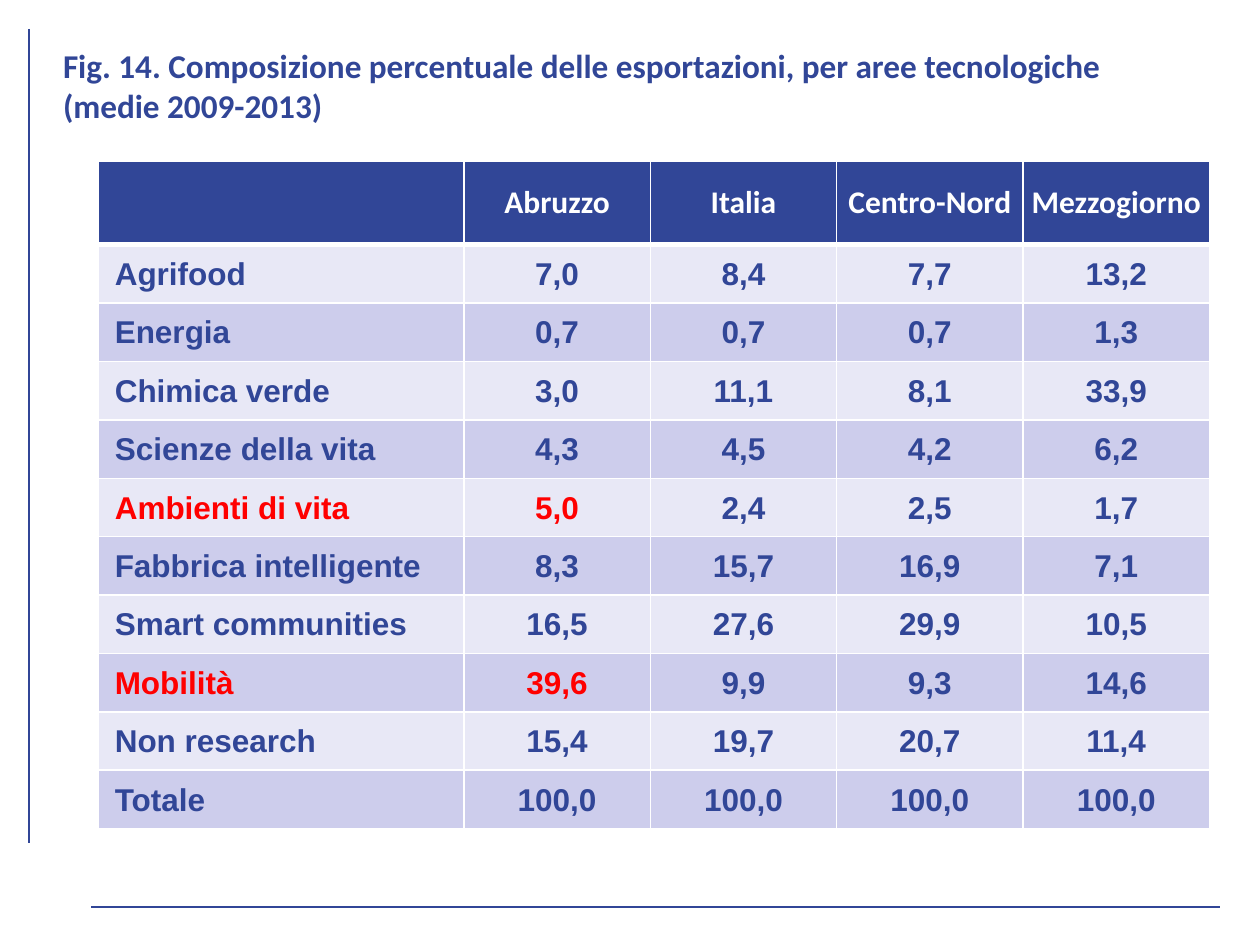
"""Build a slide with a table of export shares by technology area."""
from lxml import etree
from pptx import Presentation, util as u
from pptx.dml.color import RGBColor
from pptx.enum import shapes, text
from pptx.oxml import ns

NAVY = RGBColor(0x31, 0x46, 0x97)
WHITE = RGBColor(0xFF, 0xFF, 0xFF)
RED = RGBColor(0xFF, 0x00, 0x00)
PALE = RGBColor(0xE8, 0xE8, 0xF6)
LILAC = RGBColor(0xCD, 0xCD, 0xEC)

TITLE = ("Fig. 14. Composizione percentuale delle esportazioni, "
         "per aree tecnologiche (medie 2009-2013)")
HEADER = ["", "Abruzzo", "Italia", "Centro-Nord", "Mezzogiorno"]
EXPORTS = [
    ["Agrifood", "7,0", "8,4", "7,7", "13,2"],
    ["Energia", "0,7", "0,7", "0,7", "1,3"],
    ["Chimica verde", "3,0", "11,1", "8,1", "33,9"],
    ["Scienze della vita", "4,3", "4,5", "4,2", "6,2"],
    ["Ambienti di vita", "5,0", "2,4", "2,5", "1,7"],
    ["Fabbrica intelligente", "8,3", "15,7", "16,9", "7,1"],
    ["Smart communities", "16,5", "27,6", "29,9", "10,5"],
    ["Mobilità", "39,6", "9,9", "9,3", "14,6"],
    ["Non research", "15,4", "19,7", "20,7", "11,4"],
    ["Totale", "100,0", "100,0", "100,0", "100,0"],
]
HIGHLIGHTED = {"Ambienti di vita", "Mobilità"}
PX_PER_INCH = 192


def px(length):
    return u.Emu(round(length * u.Inches(1) / PX_PER_INCH))


class SlideBuilder:
    def __init__(self, slide):
        self.slide = slide
        self.heading_font = "Calibri"
        self.body_font = "Arial"
        self.title_size = 19
        self.table_size = 18

    def set_font(self, paragraph, name, size, color):
        font = paragraph.font
        font.name, font.size, font.bold = name, u.Pt(size), True
        font.color.rgb = color

    def title(self, words, left, top, width, height):
        box = self.slide.shapes.add_textbox(*map(px, (left, top, width, height)))
        frame = box.text_frame
        frame.word_wrap = True
        frame.margin_left = frame.margin_right = px(17)
        frame.margin_top = frame.margin_bottom = px(8)
        paragraph = frame.paragraphs[0]
        paragraph.text = words
        self.set_font(paragraph, self.heading_font, self.title_size, NAVY)

    def line(self, x1, y1, x2, y2):
        connector = self.slide.shapes.add_connector(
            shapes.MSO_CONNECTOR.STRAIGHT, *map(px, (x1, y1, x2, y2)))
        connector.line.color.rgb = NAVY
        connector.line.width = u.Pt(0.75)
        properties = connector.element.find(ns.qn("p:spPr"))
        etree.SubElement(properties, ns.qn("a:effectLst"))

    def borders(self, cell, top, bottom):
        properties = cell._tc.get_or_add_tcPr()
        for side, points in (("L", 1), ("R", 1), ("T", top), ("B", bottom)):
            border = etree.SubElement(properties, ns.qn(f"a:ln{side}"), w=str(u.Pt(points)))
            fill = etree.SubElement(border, ns.qn("a:solidFill"))
            etree.SubElement(fill, ns.qn("a:srgbClr"), val=str(WHITE))

    def cell(self, cell, words, font_name, color, fill, centered):
        cell.margin_left = cell.margin_right = cell.margin_top = px(2)
        cell.margin_bottom = 0
        cell.vertical_anchor = text.MSO_ANCHOR.MIDDLE
        cell.fill.solid()
        cell.fill.fore_color.rgb = fill
        paragraph = cell.text_frame.paragraphs[0]
        paragraph.text = words
        self.set_font(paragraph, font_name, self.table_size, color)
        if centered:
            paragraph.alignment = text.PP_ALIGN.CENTER
        else:
            paragraph._p.get_or_add_pPr().set("marL", str(px(23)))

    def table(self, rows, left, top, widths, heights):
        frame = self.slide.shapes.add_table(
            len(rows), len(widths), px(left), px(top), px(sum(widths)), px(sum(heights)))
        table = frame.table
        for column, width in zip(table.columns, widths):
            column.width = px(width)
        for row, height in zip(table.rows, heights):
            row.height = px(height)
        for i, row in enumerate(rows):
            for j, words in enumerate(row):
                cell = table.cell(i, j)
                self.borders(cell, 3 if i < 2 else 1, 3 if i == 0 else 1)
                if i == 0:
                    self.cell(cell, words, self.heading_font, WHITE, NAVY, True)
                else:
                    color = RED if row[0] in HIGHLIGHTED and j < 2 else NAVY
                    fill = PALE if i % 2 else LILAC
                    self.cell(cell, words, self.body_font, color, fill, j > 0)


def main():
    presentation = Presentation()
    presentation.slide_width, presentation.slide_height = px(1920), px(1440)
    slide = presentation.slides.add_slide(presentation.slide_layouts[6])
    builder = SlideBuilder(slide)
    builder.title(TITLE, 79, 61, 1755, 140)
    builder.line(44, 44, 44, 1284)
    builder.line(1859, 1382, 138, 1382)
    builder.table([HEADER] + EXPORTS, 150, 244,
                  [557] + [284] * 4, [129] + [89] * len(EXPORTS))
    presentation.save("out.pptx")


if __name__ == "__main__":
    main()
